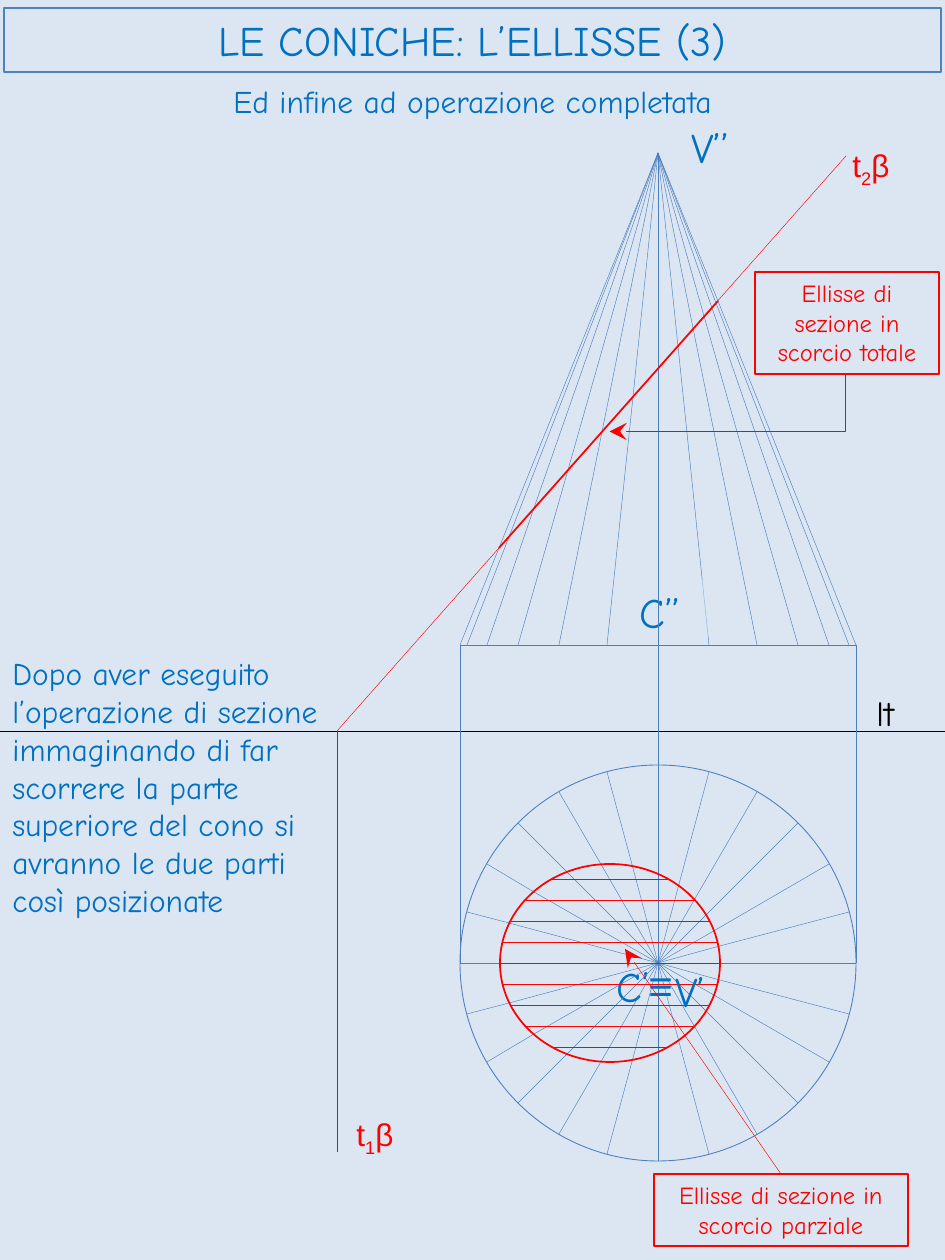
"""Build the slide on the ellipse as a conic section, drawn in plan and elevation."""
from dataclasses import dataclass
from math import cos, radians, sin, sqrt

from lxml.etree import SubElement
from pptx import Presentation
from pptx.dml.color import RGBColor as RGB
from pptx.enum.shapes import MSO_CONNECTOR as LINK, MSO_SHAPE as SHAPE
from pptx.enum.text import MSO_ANCHOR as ANCHOR, PP_ALIGN as ALIGN
from pptx.oxml.ns import qn
from pptx.util import Emu, Pt


@dataclass(frozen=True)
class Theme:
    paper: RGB = RGB.from_string("DCE6F2")
    ink: RGB = RGB.from_string("0070C0")
    cone: RGB = RGB.from_string("4B7EBC")
    outline: RGB = RGB.from_string("4F81BD")
    cut: RGB = RGB.from_string("FF0000")
    ground: RGB = RGB.from_string("000000")
    hand: str = "Comic Neue"
    plain: str = "Arial"
    big: int = 24
    ground_size: int = 20
    body: int = 18
    note: int = 14
    hairline: float = 0.25
    thin: float = 0.5
    frame: float = 0.75
    bold: float = 1


theme = Theme()
PX = 914400 / 126


def draw_line(start, end, color, width=theme.hairline, arrow=False, kind=LINK.STRAIGHT):
    ends = [Emu(round(round(v) * PX)) for v in (*start, *end)]
    link = slide.shapes.add_connector(kind, *ends)
    link.line.color.rgb = color
    link.line.width = Pt(width)
    if arrow:
        SubElement(link.line._get_or_add_ln(), qn("a:tailEnd"), type="stealth", w="lg", len="lg")
    SubElement(link._element.spPr, qn("a:effectLst"))
    return link


def write(holder, text, size, color, font=theme.hand, align=ALIGN.LEFT, anchor=ANCHOR.TOP):
    frame = holder.text_frame
    frame.word_wrap = True
    frame.vertical_anchor = anchor
    paragraph = frame.paragraphs[0]
    paragraph.alignment = align
    paragraph.font.size = Pt(size)
    paragraph.font.name = font
    paragraph.font.color.rgb = color
    for index, part in enumerate(text.split("_")):
        run = paragraph.add_run()
        run.text = part
        if index % 2:
            run._r.get_or_add_rPr().set("baseline", "-25000")


deck = Presentation()
deck.slide_width, deck.slide_height = (Emu(round(v * PX)) for v in (945, 1260))
slide = deck.slides.add_slide(deck.slide_layouts[5])
slide.background.fill.solid()
slide.background.fill.fore_color.rgb = theme.paper

title = slide.shapes.title
title.left, title.top, title.width, title.height = (Emu(round(v * PX)) for v in (4, 8, 937, 64))
title.line.color.rgb = theme.outline
title.line.width = Pt(theme.frame)
write(title, "LE CONICHE: L’ELLISSE (3)", theme.big, theme.ink, align=ALIGN.CENTER, anchor=ANCHOR.MIDDLE)

axis, apex, base, center, radius = 658, 153, 645, 963, 198
ground, trace_x, trace_end = 731, 337, (846, 156)
height = base - apex
slope = (ground - trace_end[1]) / (trace_end[0] - trace_x)

draw_line((0, ground), (945, ground), theme.ground)
draw_line((axis - radius, base), (axis + radius, base), theme.cone, theme.thin)
for side in (axis - radius, axis + radius):
    draw_line((side, base), (side, center), theme.cone)

cuts = {}
for angle in range(0, 360, 15):
    reach = radius * cos(radians(angle))
    cuts[angle] = (ground - slope * (axis - trace_x) - apex) / (height + slope * reach)

for angle in range(0, 181, 15):
    reach, cut = radius * cos(radians(angle)), cuts[angle]
    crossing = (axis + cut * reach, apex + cut * height)
    draw_line((axis, apex), crossing, theme.cone)
    draw_line(crossing, (axis + reach, base), theme.cone)

for text, left, top, width, box_height in (
    ("C’’", 627, 580, 81, 63),
    ("C’", 604, 954, 59, 49),
    ("V’’", 679, 115, 81, 64),
):
    box = [Emu(round(v * PX)) for v in (left, top, width, box_height)]
    point = slide.shapes.add_shape(SHAPE.RECTANGLE, *box)
    point.shadow.inherit = False
    point.line.fill.background()
    point.fill.solid()
    point.fill.fore_color.rgb = theme.paper
    SubElement(point._element.spPr.find(".//" + qn("a:srgbClr")), qn("a:alpha"), val="50000")
    write(point, text, theme.big, theme.ink)

for angle, cut in cuts.items():
    dx, dy = radius * cos(radians(angle)), radius * sin(radians(angle))
    crossing = (axis + cut * dx, center + cut * dy)
    draw_line((axis, center), crossing, theme.cone)
    draw_line(crossing, (axis + dx, center + dy), theme.cone)
draw_line((axis, apex), (axis, center), theme.cone)

draw_line((trace_x, ground), trace_end, theme.cut)
draw_line((trace_x, ground), (trace_x, 1152), theme.cut)
section_left, section_right = (axis - radius * cuts[180], axis + radius * cuts[0])
draw_line(
    (section_left, apex + height * cuts[180]),
    (section_right, apex + height * cuts[0]),
    theme.cut, theme.bold,
)

middle, half_width, half_height = 610, 110, 99
for offset in range(-84, 85, 21):
    chord = half_width * sqrt(1 - (offset / half_height) ** 2)
    draw_line((middle - chord, center + offset), (middle + chord, center + offset), theme.cut)

for x, y, rx, ry, color, width in (
    (axis, center, radius, radius, theme.outline, theme.thin),
    (middle, center, half_width, half_height, theme.cut, theme.bold),
):
    box = [Emu(round(v * PX)) for v in (x - rx, y - ry, 2 * rx, 2 * ry)]
    curve = slide.shapes.add_shape(SHAPE.OVAL, *box)
    curve.shadow.inherit = False
    curve.fill.background()
    curve.line.color.rgb = color
    curve.line.width = Pt(width)

explanation = (
    "Dopo aver eseguito l’operazione di sezione immaginando di far scorrere "
    "la parte superiore del cono si avranno le due parti così posizionate"
)
for text, left, top, width, box_height, size, color, font, align in (
    ("lt", 864, 685, 59, 55, theme.ground_size, theme.ground, theme.hand, ALIGN.LEFT),
    ("t_2_β", 840, 140, 69, 50, theme.body, theme.cut, theme.plain, ALIGN.LEFT),
    ("t_1_β", 344, 1109, 69, 50, theme.body, theme.cut, theme.plain, ALIGN.LEFT),
    ("≡", 636, 953, 54, 66, theme.big, theme.ink, theme.plain, ALIGN.LEFT),
    ("V’", 663, 959, 64, 63, theme.big, theme.ink, theme.hand, ALIGN.LEFT),
    (explanation, 0, 648, 338, 318, theme.body, theme.ink, theme.hand, ALIGN.LEFT),
    ("Ed infine ad operazione completata", 4, 76, 937, 50, theme.body, theme.ink, theme.hand, ALIGN.CENTER),
):
    box = [Emu(round(v * PX)) for v in (left, top, width, box_height)]
    write(slide.shapes.add_textbox(*box), text, size, color, font, align)

for text, left, top, width, box_height in (
    ("Ellisse di sezione in scorcio totale", 755, 272, 184, 102),
    ("Ellisse di sezione in scorcio parziale", 654, 1174, 254, 72),
):
    box = [Emu(round(v * PX)) for v in (left, top, width, box_height)]
    callout = slide.shapes.add_shape(SHAPE.RECTANGLE, *box)
    callout.shadow.inherit = False
    callout.fill.background()
    callout.line.color.rgb = theme.cut
    callout.line.width = Pt(theme.frame)
    write(callout, text, theme.note, theme.cut, align=ALIGN.CENTER)

elbow = draw_line((699, 285), (756, 521), theme.cut, arrow=True, kind=LINK.ELBOW)
elbow._element.spPr.find(qn("a:prstGeom")).set("prst", "bentConnector2")
elbow._element.spPr.find(qn("a:xfrm")).set("rot", "5400000")
draw_line((781, 1174), (625, 949), theme.cut, arrow=True)

deck.save("out.pptx")
